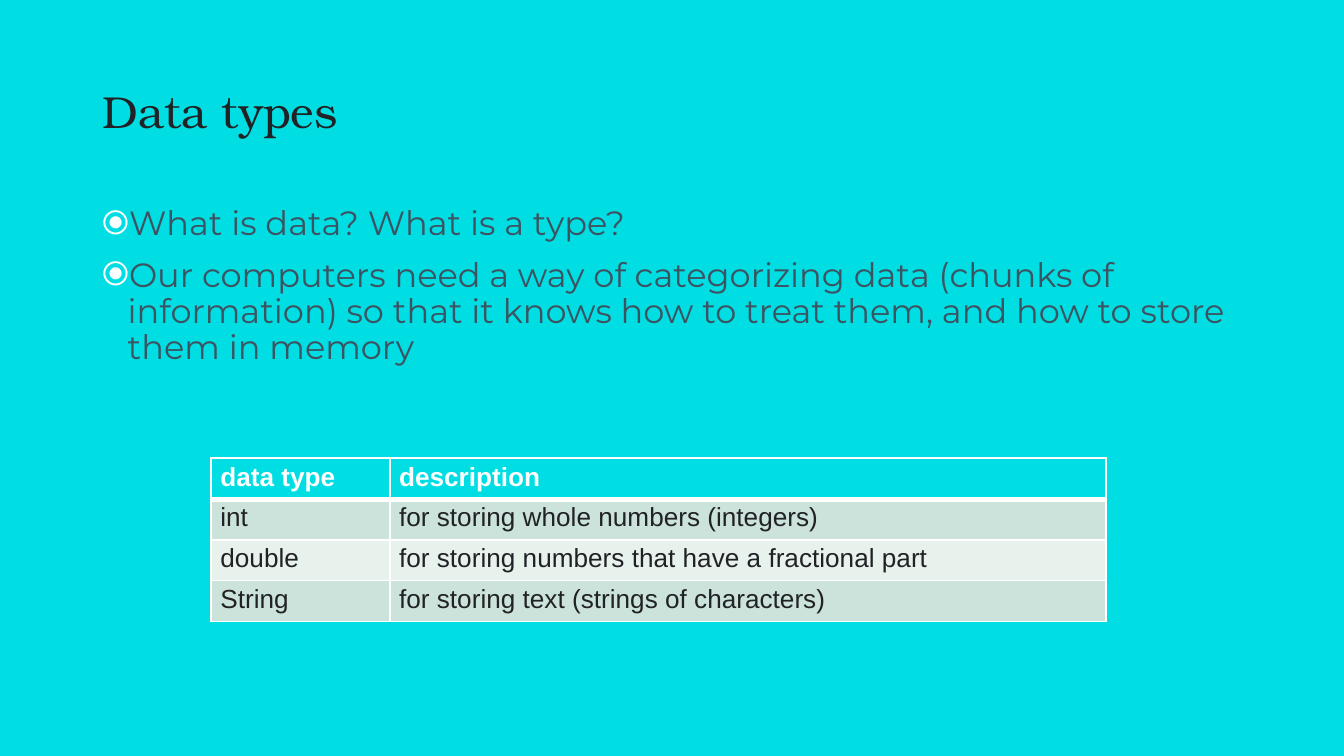
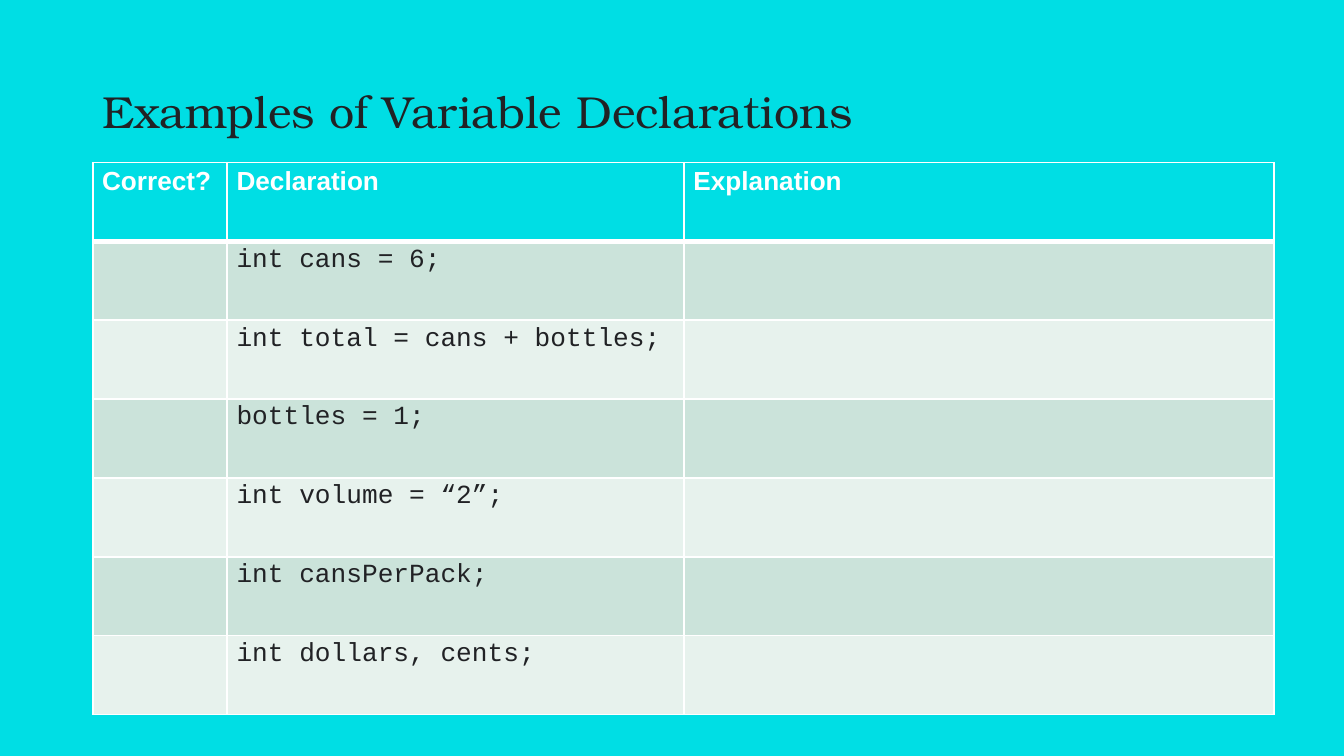
from dataclasses import dataclass

from lxml.etree import SubElement
from pptx import Presentation
from pptx.dml.color import RGBColor
from pptx.enum.text import MSO_ANCHOR as Anchor
from pptx.oxml.ns import qn
from pptx.util import Inches, Pt


@dataclass(frozen=True)
class Theme:
    background: str = "00DEE4"
    ink: str = "212225"
    body: str = "3C5361"
    white: str = "FFFFFF"
    bands: tuple = ("CBE3DA", "E7F2ED")
    title_font: str = "TeX Gyre Bonum"
    body_font: str = "Montserrat"
    bullet_font: str = "Arial"
    table_font: str = "Arial"
    code_font: str = "Courier New"
    title_size: int = 24
    body_size: int = 18
    table_size: int = 14
    thin: int = 1
    thick: int = 3


THEME = Theme()
WIDTH, HEIGHT = Inches(10), Inches(5.625)
LEFT, CONTENT_WIDTH = 6.9, 86.2  # percent of the slide's width


# Lengths as percentages of the slide
def across(share):
    return round(WIDTH * share / 100)


def down(share):
    return round(HEIGHT * share / 100)


# Text
def write(para, text, *, font, size, color, bold=False, line_spacing=None, before=0):
    span = para.add_run()
    span.text = text
    span.font.name = font
    span.font.size = Pt(size)
    span.font.bold = bold
    span.font.color.rgb = RGBColor.from_string(color)
    para.space_before = Pt(before)
    if line_spacing:
        para.line_spacing = line_spacing


def add_bullet(para, char="⦿", indent=Inches(0.19)):
    props = para._p.get_or_add_pPr()
    props.set("marL", str(indent))
    props.set("indent", str(-indent))
    color = SubElement(props, qn("a:buClr"))
    SubElement(color, qn("a:srgbClr"), val=THEME.white)
    SubElement(props, qn("a:buFont"), typeface=THEME.bullet_font)
    SubElement(props, qn("a:buChar"), char=char)


def add_text_frame(page, top, height, anchor=Anchor.TOP):
    box = page.shapes.add_textbox(
        across(LEFT), down(top), across(CONTENT_WIDTH), down(height))
    frame = box.text_frame
    frame.word_wrap = True
    frame.vertical_anchor = anchor
    frame.margin_left = frame.margin_right = Inches(0.07)
    frame.margin_top = frame.margin_bottom = Inches(0.04)
    return frame


def add_bullets(page, items):
    frame = add_text_frame(page, top=26.67, height=63.47)
    for index, item in enumerate(items):
        para = frame.add_paragraph() if index else frame.paragraphs[0]
        write(para, item, font=THEME.body_font, size=THEME.body_size,
              color=THEME.body, line_spacing=0.9, before=8 if index else 0)
        add_bullet(para)


# Tables
def set_border(cell, side, width):
    line = SubElement(cell._tc.get_or_add_tcPr(), qn(f"a:ln{side}"), w=str(Pt(width)))
    fill = SubElement(line, qn("a:solidFill"))
    SubElement(fill, qn("a:srgbClr"), val=THEME.white)


def style_cell(cell, row):
    cell.margin_left = cell.margin_right = Inches(0.07)
    cell.margin_top = cell.margin_bottom = Inches(0.03)
    thick_side = {0: "B", 1: "T"}.get(row)  # rule under the header
    for side in "LRTB":
        set_border(cell, side, THEME.thick if side == thick_side else THEME.thin)
    cell.fill.solid()
    color = THEME.bands[(row - 1) % 2] if row else THEME.background
    cell.fill.fore_color.rgb = RGBColor.from_string(color)


def add_grid(page, rows, *, left, top, columns, row_height, font=THEME.table_font):
    table = page.shapes.add_table(
        len(rows), len(columns), across(left), down(top),
        across(sum(columns)), down(row_height * len(rows))).table
    for column, share in zip(table.columns, columns):
        column.width = across(share)
    for row, texts in enumerate(rows):
        table.rows[row].height = down(row_height)
        for col, text in enumerate(texts):
            cell = table.cell(row, col)
            style_cell(cell, row)
            if text:
                header = row == 0
                write(cell.text_frame.paragraphs[0], text,
                      font=THEME.table_font if header else font,
                      size=THEME.table_size, bold=header,
                      color=THEME.white if header else THEME.ink)


# Slides
def add_page(deck, title):
    page = deck.slides.add_slide(deck.slide_layouts[6])
    page.background.fill.solid()
    page.background.fill.fore_color.rgb = RGBColor.from_string(THEME.background)
    frame = add_text_frame(page, top=5.33, height=19.38, anchor=Anchor.MIDDLE)
    write(frame.paragraphs[0], title, font=THEME.title_font,
          size=THEME.title_size, color=THEME.ink, line_spacing=0.9)
    return page


def add_data_types(deck):
    page = add_page(deck, "Data types")
    add_bullets(page, [
        "What is data? What is a type?",
        "Our computers need a way of categorizing data (chunks of information) "
        "so that it knows how to treat them, and how to store them in memory",
    ])
    add_grid(page, [
        ("data type", "description"),
        ("int", "for storing whole numbers (integers)"),
        ("double", "for storing numbers that have a fractional part"),
        ("String", "for storing text (strings of characters)"),
    ], left=15.7, top=60.62, columns=(13.3, 53.3), row_height=5.4)


def add_declarations(deck):
    page = add_page(deck, "Examples of Variable Declarations")
    declarations = [
        "int cans = 6;",
        "int total = cans + bottles;",
        "bottles = 1;",
        "int volume = “2”;",
        "int cansPerPack;",
        "int dollars, cents;",
    ]
    rows = [("Correct?", "Declaration", "Explanation")]
    rows += [("", declaration, "") for declaration in declarations]
    add_grid(page, rows, left=LEFT, top=21.51, columns=(10, 34, 43.9),
             row_height=10.43, font=THEME.code_font)


def main():
    deck = Presentation()
    deck.slide_width, deck.slide_height = WIDTH, HEIGHT
    add_data_types(deck)
    add_declarations(deck)
    deck.save("out.pptx")


if __name__ == "__main__":
    main()
